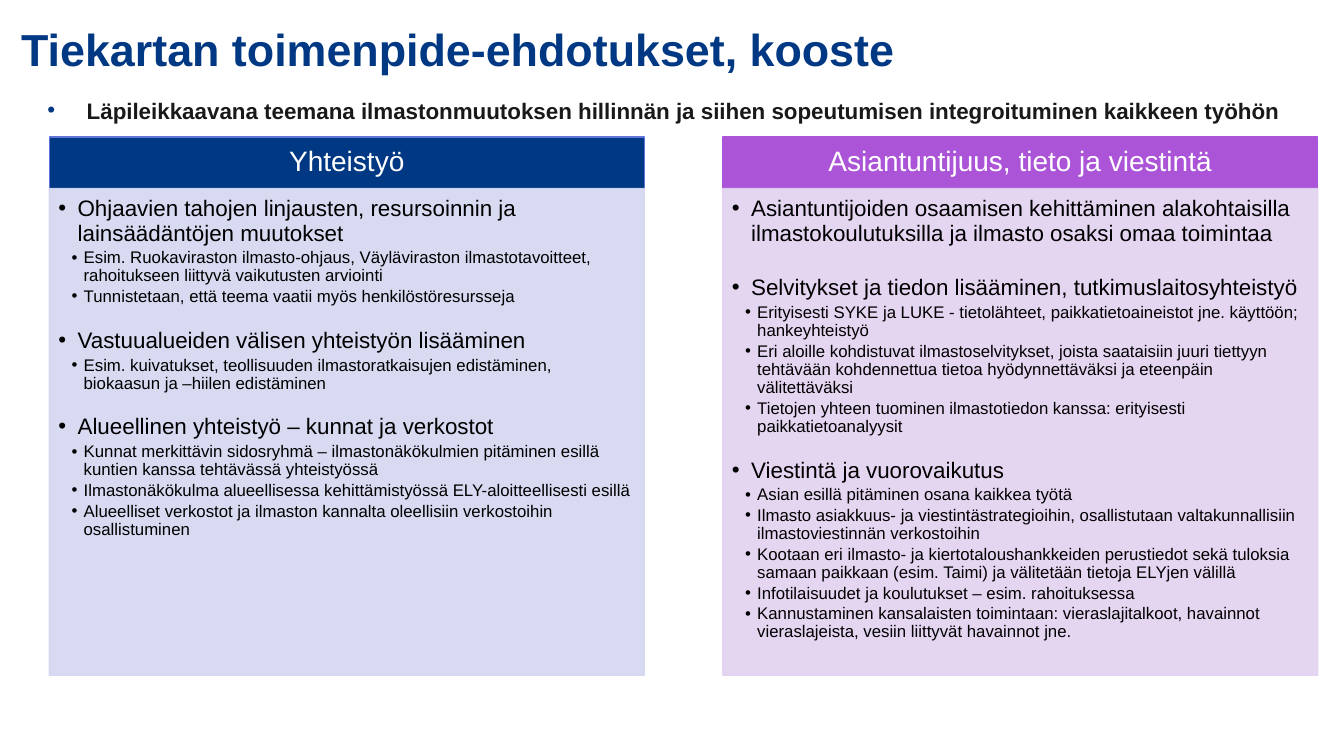
from dataclasses import dataclass

from lxml.etree import SubElement
from pptx import Presentation
from pptx.dml.color import RGBColor
from pptx.enum.shapes import MSO_SHAPE
from pptx.enum.text import MSO_ANCHOR, PP_ALIGN
from pptx.oxml.ns import qn
from pptx.util import Inches, Pt


@dataclass(frozen=True)
class Theme:
    font: str = "Arial"
    navy: str = "003883"
    navy_edge: str = "6274D8"
    lavender: str = "D3D6F0"
    purple: str = "AB54D7"
    lilac: str = "E2D1F0"
    black: str = "000000"
    white: str = "FFFFFF"
    title_size: int = 32
    header_size: int = 20
    topic_size: int = 16
    detail_size: int = 12


theme = Theme()


def write(paragraph, text, size, color, bold=False, bullet_color=None, indent=None):
    paragraph.text = text
    if indent:
        margin, hanging = indent
        properties = paragraph._p.get_or_add_pPr()
        properties.set("marL", str(Inches(margin)))
        properties.set("indent", str(-Inches(hanging)))
        bullet_fill = SubElement(properties, qn("a:buClr"))
        SubElement(bullet_fill, qn("a:srgbClr"), val=bullet_color or color)
        SubElement(properties, qn("a:buFont"), typeface=theme.font)
        SubElement(properties, qn("a:buChar"), char="•")
    for run in paragraph.runs:
        run.font.name = theme.font
        run.font.size = Pt(size)
        run.font.bold = bold
        run.font.color.rgb = RGBColor.from_string(color)


def fade(element):
    for color in element.iter(qn("a:srgbClr")):
        SubElement(color, qn("a:alpha"), val="90000")


columns = [
    ("Yhteistyö", theme.navy, theme.navy_edge, theme.lavender, [
        ("Ohjaavien tahojen linjausten, resursoinnin ja lainsäädäntöjen muutokset", 0, [
            "Esim. Ruokaviraston ilmasto-ohjaus, Väyläviraston ilmastotavoitteet, rahoitukseen liittyvä vaikutusten arviointi",
            "Tunnistetaan, että teema vaatii myös henkilöstöresursseja",
        ]),
        ("Vastuualueiden välisen yhteistyön lisääminen", 14.5, [
            "Esim. kuivatukset, teollisuuden ilmastoratkaisujen edistäminen, biokaasun ja –hiilen edistäminen",
        ]),
        ("Alueellinen yhteistyö – kunnat ja verkostot", 14.5, [
            "Kunnat merkittävin sidosryhmä – ilmastonäkökulmien pitäminen esillä kuntien kanssa tehtävässä yhteistyössä",
            "Ilmastonäkökulma alueellisessa kehittämistyössä ELY-aloitteellisesti esillä",
            "Alueelliset verkostot ja ilmaston kannalta oleellisiin verkostoihin osallistuminen",
        ]),
    ]),
    ("Asiantuntijuus, tieto ja viestintä", theme.purple, theme.purple, theme.lilac, [
        ("Asiantuntijoiden osaamisen kehittäminen alakohtaisilla ilmastokoulutuksilla ja ilmasto osaksi omaa toimintaa", 0, []),
        ("Selvitykset ja tiedon lisääminen, tutkimuslaitosyhteistyö", 19.5, [
            "Erityisesti SYKE ja LUKE - tietolähteet, paikkatietoaineistot jne. käyttöön; hankeyhteistyö",
            "Eri aloille kohdistuvat ilmastoselvitykset, joista saataisiin juuri tiettyyn tehtävään kohdennettua tietoa hyödynnettäväksi ja eteenpäin välitettäväksi",
            "Tietojen yhteen tuominen ilmastotiedon kanssa: erityisesti paikkatietoanalyysit",
        ]),
        ("Viestintä ja vuorovaikutus", 14.5, [
            "Asian esillä pitäminen osana kaikkea työtä",
            "Ilmasto asiakkuus- ja viestintästrategioihin, osallistutaan valtakunnallisiin ilmastoviestinnän verkostoihin",
            "Kootaan eri ilmasto- ja kiertotaloushankkeiden perustiedot sekä tuloksia samaan paikkaan (esim. Taimi) ja välitetään tietoja ELYjen välillä",
            "Infotilaisuudet ja koulutukset – esim. rahoituksessa",
            "Kannustaminen kansalaisten toimintaan: vieraslajitalkoot, havainnot vieraslajeista, vesiin liittyvät havainnot jne.",
        ]),
    ]),
]

presentation = Presentation()
presentation.slide_width = Inches(13.33)
presentation.slide_height = Inches(7.5)
slide = presentation.slides.add_slide(presentation.slide_layouts[6])

title = slide.shapes.add_textbox(Inches(0.21), Inches(0.28), Inches(11.63), Inches(0.6))
theme_line = slide.shapes.add_textbox(Inches(0.47), Inches(0.96), Inches(12.46), Inches(0.35))
for heading in (title, theme_line):
    frame = heading.text_frame
    frame.word_wrap = True
    frame.margin_left = frame.margin_right = frame.margin_top = frame.margin_bottom = 0

write(title.text_frame.paragraphs[0], "Tiekartan toimenpide-ehdotukset, kooste",
      theme.title_size, theme.navy, bold=True)
title.text_frame.paragraphs[0].line_spacing = 0.9

crosscutting = theme_line.text_frame.paragraphs[0]
write(crosscutting,
      "Läpileikkaavana teemana ilmastonmuutoksen hillinnän ja siihen sopeutumisen integroituminen kaikkeen työhön",
      theme.topic_size, theme.black, bold=True, bullet_color=theme.navy, indent=(0.39, 0.39))
fade(crosscutting.runs[0]._r)

for index, (name, header_fill, header_edge, panel_fill, topics) in enumerate(columns):
    left = Inches(0.49 + index * 6.68)
    header = slide.shapes.add_shape(MSO_SHAPE.RECTANGLE, left, Inches(1.36), Inches(5.9), Inches(0.51))
    panel = slide.shapes.add_shape(MSO_SHAPE.RECTANGLE, left, Inches(1.87), Inches(5.9), Inches(4.83))
    for box, fill, edge in ((header, header_fill, header_edge), (panel, panel_fill, panel_fill)):
        box.shadow.inherit = False
        box.fill.solid()
        box.fill.fore_color.rgb = RGBColor.from_string(fill)
        box.line.color.rgb = RGBColor.from_string(edge)
        box.line.width = Pt(1)
        box.text_frame.word_wrap = True
    fade(panel._element.spPr)

    header_frame = header.text_frame
    header_frame.vertical_anchor = MSO_ANCHOR.MIDDLE
    header_frame.margin_left = header_frame.margin_right = Inches(0.16)
    header_frame.margin_top = header_frame.margin_bottom = Inches(0.09)
    write(header_frame.paragraphs[0], name, theme.header_size, theme.white)
    header_frame.paragraphs[0].alignment = PP_ALIGN.CENTER
    header_frame.paragraphs[0].line_spacing = 0.9

    panel_frame = panel.text_frame
    panel_frame.vertical_anchor = MSO_ANCHOR.TOP
    panel_frame.margin_left = panel_frame.margin_top = Inches(0.09)
    panel_frame.margin_right = Inches(0.12)
    panel_frame.margin_bottom = Inches(0.14)
    entries = []
    for topic, gap, details in topics:
        entries.append((topic, 0, theme.topic_size, (0.19, 0.19), gap))
        entries += [(detail, 1, theme.detail_size, (0.25, 0.12), 0) for detail in details]
    for position, (text, level, size, indent, gap) in enumerate(entries):
        entry = panel_frame.add_paragraph() if position else panel_frame.paragraphs[0]
        write(entry, text, size, theme.black, indent=indent)
        entry.level = level
        entry.alignment = PP_ALIGN.LEFT
        entry.line_spacing = 0.9
        entry.space_after = Pt(size * 0.15)
        if gap:
            entry.space_before = Pt(gap)

presentation.save("out.pptx")
